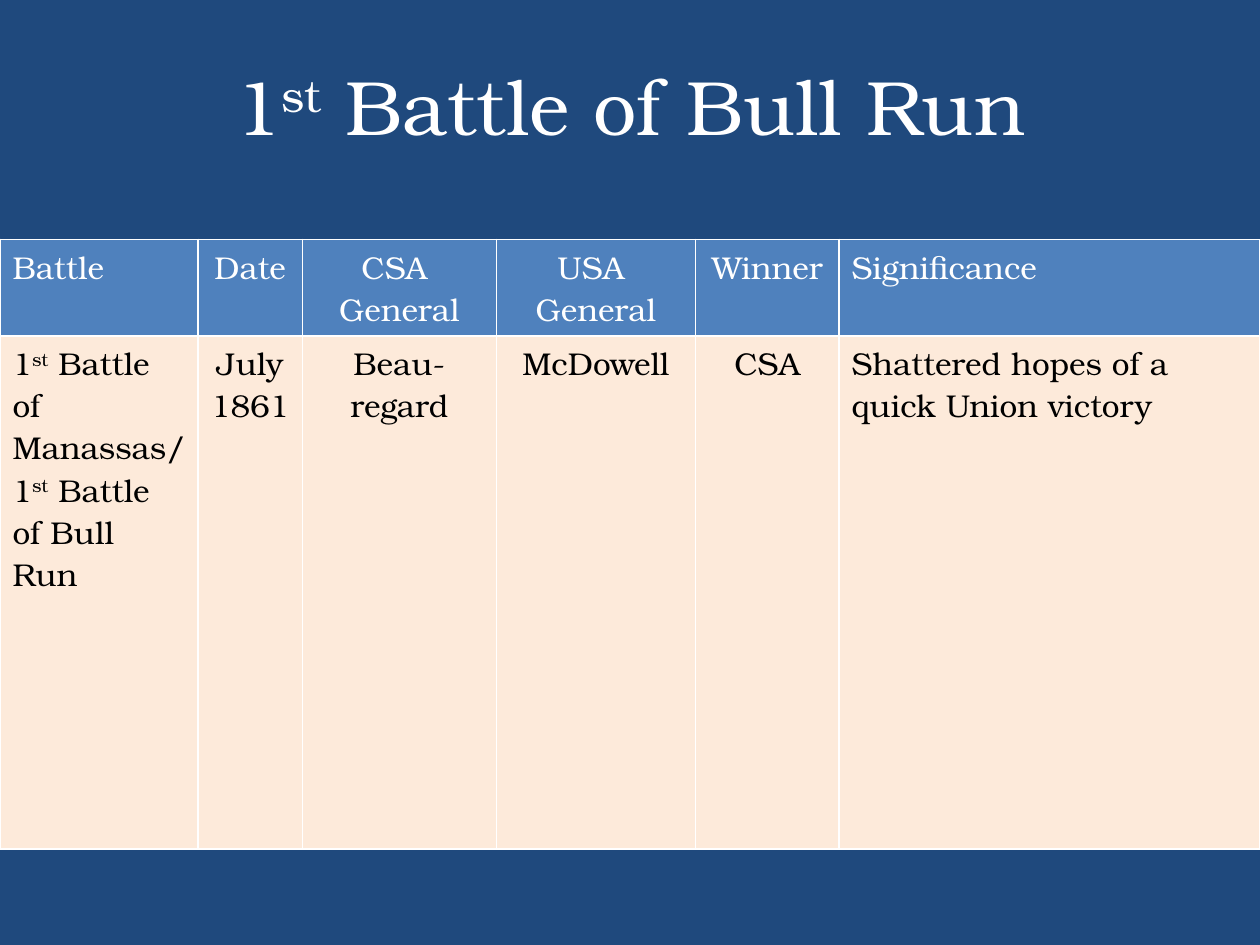
"""Build the slide on the 1st Battle of Bull Run."""
import dataclasses

import lxml.etree
import pptx
import pptx.dml.color
import pptx.enum.text
import pptx.oxml.ns
import pptx.util

RGBColor = pptx.dml.color.RGBColor
NAVY = RGBColor(0x1F, 0x49, 0x7D)
BLUE = RGBColor(0x4F, 0x81, 0xBD)
CREAM = RGBColor(0xFD, 0xEA, 0xDA)
WHITE = RGBColor(0xFF, 0xFF, 0xFF)
BLACK = RGBColor(0x00, 0x00, 0x00)
FONT = "TeX Gyre Bonum"
WIDTH = pptx.util.Inches(10)
HEIGHT = pptx.util.Inches(7.5)
LEFT = pptx.enum.text.PP_ALIGN.LEFT
CENTER = pptx.enum.text.PP_ALIGN.CENTER
SUPERSCRIPT = "^"


@dataclasses.dataclass(frozen=True)
class Column:
    width: float
    heading: str
    entry: str
    align: pptx.enum.text.PP_ALIGN = CENTER


@dataclasses.dataclass(frozen=True)
class RowStyle:
    height: float
    fill: RGBColor
    color: RGBColor


COLUMNS = [
    Column(1.57, "Battle", "1^st^ Battle of Manassas/ 1^st^ Battle of Bull Run", LEFT),
    Column(0.83, "Date", "July 1861"),
    Column(1.54, "CSA \nGeneral", "Beau-regard"),
    Column(1.58, "USA \nGeneral", "McDowell"),
    Column(1.14, "Winner", "CSA"),
    Column(3.34, "Significance", "Shattered hopes of a quick Union victory", LEFT),
]
HEADER = RowStyle(0.66, BLUE, WHITE)
BODY = RowStyle(4.07, CREAM, BLACK)


def write(frame: pptx.text.text.TextFrame, text: str, size: int, color: RGBColor,
          align: pptx.enum.text.PP_ALIGN) -> None:
    """Fill a text frame, raising the parts between superscript marks."""
    for number, line in enumerate(text.split("\n")):
        paragraph = frame.add_paragraph() if number else frame.paragraphs[0]
        paragraph.alignment = align
        paragraph.font.name = FONT
        paragraph.font.size = pptx.util.Pt(size)
        paragraph.font.bold = False
        paragraph.font.color.rgb = color
        for index, part in enumerate(line.split(SUPERSCRIPT)):
            run = paragraph.add_run()
            run.text = part
            if index % 2:
                run.font._element.set("baseline", "30000")


def add_borders(cell: pptx.table._Cell, color: RGBColor, points: float) -> None:
    """Draw a line on all four sides of a cell."""
    qn = pptx.oxml.ns.qn
    properties = cell._tc.get_or_add_tcPr()
    for side in ("a:lnL", "a:lnR", "a:lnT", "a:lnB"):
        line = lxml.etree.SubElement(properties, qn(side), w=str(pptx.util.Pt(points)))
        fill = lxml.etree.SubElement(line, qn("a:solidFill"))
        lxml.etree.SubElement(fill, qn("a:srgbClr"), val=str(color))


def add_title(slide: pptx.slide.Slide, text: str) -> None:
    """Place the centred slide title."""
    box = slide.shapes.add_textbox(
        int(WIDTH * 0.05), int(HEIGHT * 0.044), int(WIDTH * 0.9), int(HEIGHT * 0.133))
    box.text_frame.word_wrap = True
    box.text_frame.vertical_anchor = pptx.enum.text.MSO_ANCHOR.MIDDLE
    write(box.text_frame, text, 44, WHITE, CENTER)


def add_battle_table(slide: pptx.slide.Slide) -> None:
    """Place the table across the full slide width."""
    styles = (HEADER, BODY)
    height = pptx.util.Inches(sum(style.height for style in styles))
    table = slide.shapes.add_table(
        len(styles), len(COLUMNS), 0, pptx.util.Inches(1.9), WIDTH, height).table
    table.first_row = table.horz_banding = False
    for row, style in zip(table.rows, styles):
        row.height = pptx.util.Inches(style.height)
    for index, column in enumerate(COLUMNS):
        table.columns[index].width = pptx.util.Inches(column.width)
        for row, (style, text) in enumerate(zip(styles, (column.heading, column.entry))):
            cell = table.cell(row, index)
            add_borders(cell, WHITE, 1)
            cell.fill.solid()
            cell.fill.fore_color.rgb = style.fill
            write(cell.text_frame, text, 18, style.color, column.align)


def main() -> None:
    """Build and save the presentation."""
    presentation = pptx.Presentation()
    presentation.slide_width, presentation.slide_height = WIDTH, HEIGHT
    slide = presentation.slides.add_slide(presentation.slide_layouts[6])
    slide.background.fill.solid()
    slide.background.fill.fore_color.rgb = NAVY
    add_battle_table(slide)
    add_title(slide, "1^st^ Battle of Bull Run")
    presentation.save("out.pptx")


if __name__ == "__main__":
    main()
